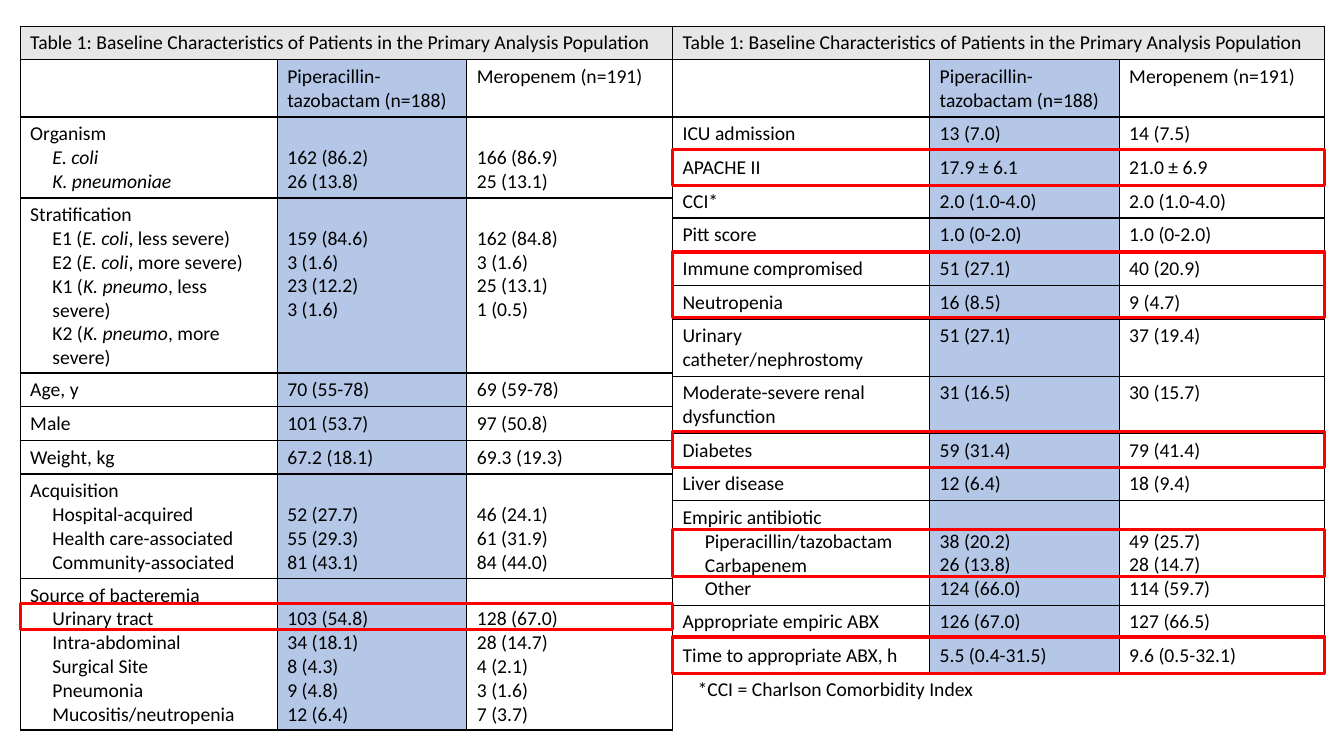
import pptx
import pptx.util
import pptx.dml.color
import pptx.enum.shapes
import pptx.oxml
import pptx.oxml.ns
from pptx.util import Inches

BLUE, GREY, RED, BLACK = "B4C7E7", "E7E6E6", "FF0000", "000000"
LEFT_X, RIGHT_X, TABLE_WIDTH = 0.2, 6.67, 6.47
COLUMNS = [2.55, 1.88, 2.04]
LINE_HEIGHT, ROW_PADDING = 0.234, 0.1
TOP_MARGIN, BOTTOM_MARGIN = 0.05, 0.02  # a small bottom margin lets the set row heights hold


def paint(color_format, hex_color):
    color_format.rgb = pptx.dml.color.RGBColor.from_string(hex_color)


def write(frame, text, size=14, font="Calibri", color=BLACK, indent=0):
    """One paragraph per line; words between underscores are italic.
    Lines after the first are indented by the given inches."""
    for number, line in enumerate(text.split("\n")):
        paragraph = frame.paragraphs[0] if number == 0 else frame.add_paragraph()
        if number and indent:
            paragraph._p.get_or_add_pPr().set("marL", str(Inches(indent)))
        for part, words in enumerate(line.split("_")):
            if words:
                run = paragraph.add_run()
                run.text = words
                run.font.size = pptx.util.Pt(size)
                run.font.name = font
                run.font.italic = part % 2 == 1
                paint(run.font.color, color)


# Rows: number of text lines, label, piperacillin-tazobactam, meropenem
header_rows = [
    (1, "Table 1: Baseline Characteristics of Patients in the Primary Analysis Population", "", ""),
    (2, "", "Piperacillin-tazobactam (n=188)", "Meropenem (n=191)"),
]
left_rows = [
    (3, "Organism\n_E. coli_\n_K. pneumoniae_",
     "162 (86.2)\n26 (13.8)", "166 (86.9)\n25 (13.1)"),
    (7, "Stratification\nE1 (_E. coli_, less severe)\nE2 (_E. coli_, more severe)\n"
        "K1 (_K. pneumo_, less severe)\nK2 (_K. pneumo_, more severe)",
     "159 (84.6)\n3 (1.6)\n23 (12.2)\n3 (1.6)",
     "162 (84.8)\n3 (1.6)\n25 (13.1)\n1 (0.5)"),
    (1, "Age, y", "70 (55-78)", "69 (59-78)"),
    (1, "Male", "101 (53.7)", "97 (50.8)"),
    (1, "Weight, kg", "67.2 (18.1)", "69.3 (19.3)"),
    (4, "Acquisition\nHospital-acquired\nHealth care-associated\nCommunity-associated",
     "52 (27.7)\n55 (29.3)\n81 (43.1)", "46 (24.1)\n61 (31.9)\n84 (44.0)"),
    (6, "Source of bacteremia\nUrinary tract\nIntra-abdominal\nSurgical Site\n"
        "Pneumonia\nMucositis/neutropenia",
     "103 (54.8)\n34 (18.1)\n8 (4.3)\n9 (4.8)\n12 (6.4)",
     "128 (67.0)\n28 (14.7)\n4 (2.1)\n3 (1.6)\n7 (3.7)"),
]
right_rows = [
    (1, "ICU admission", "13 (7.0)", "14 (7.5)"),
    (1, "APACHE II", "17.9 ± 6.1", "21.0 ± 6.9"),
    (1, "CCI*", "2.0 (1.0-4.0)", "2.0 (1.0-4.0)"),
    (1, "Pitt score", "1.0 (0-2.0)", "1.0 (0-2.0)"),
    (1, "Immune compromised", "51 (27.1)", "40 (20.9)"),
    (1, "Neutropenia", "16 (8.5)", "9 (4.7)"),
    (2, "Urinary catheter/nephrostomy", "51 (27.1)", "37 (19.4)"),
    (2, "Moderate-severe renal dysfunction", "31 (16.5)", "30 (15.7)"),
    (1, "Diabetes", "59 (31.4)", "79 (41.4)"),
    (1, "Liver disease", "12 (6.4)", "18 (9.4)"),
    (4, "Empiric antibiotic\nPiperacillin/tazobactam\nCarbapenem\nOther",
     "38 (20.2)\n26 (13.8)\n124 (66.0)", "49 (25.7)\n28 (14.7)\n114 (59.7)"),
    (1, "Appropriate empiric ABX", "126 (67.0)", "127 (66.5)"),
    (1, "Time to appropriate ABX, h", "5.5 (0.4-31.5)", "9.6 (0.5-32.1)"),
]

presentation = pptx.Presentation()
presentation.slide_width = Inches(13.33)
presentation.slide_height = Inches(7.5)
slide = presentation.slides.add_slide(presentation.slide_layouts[6])

# The two halves of the baseline table
for x, y, body_rows in [(LEFT_X, 0.26, left_rows), (RIGHT_X, 0.26, right_rows)]:
    rows = header_rows + body_rows
    heights = [lines * LINE_HEIGHT + ROW_PADDING for lines, *_ in rows]
    baseline = slide.shapes.add_table(
        len(rows), len(COLUMNS), Inches(x), Inches(y),
        Inches(TABLE_WIDTH), Inches(sum(heights))).table
    baseline.first_row = baseline.horz_banding = False
    for column, width in zip(baseline.columns, COLUMNS):
        column.width = Inches(width)
    baseline.cell(0, 0).merge(baseline.cell(0, 2))

    for r, (lines, *texts) in enumerate(rows):
        baseline.rows[r].height = Inches(heights[r])
        grouped = "\n" in texts[0]
        for c, text in enumerate(texts):
            cell = baseline.cell(r, c)
            properties = cell._tc.get_or_add_tcPr()
            for side in ("lnL", "lnR", "lnT", "lnB"):
                properties.append(pptx.oxml.parse_xml(
                    f'<a:{side} {pptx.oxml.ns.nsdecls("a")} w="12700"><a:solidFill>'
                    f'<a:srgbClr val="{BLACK}"/></a:solidFill></a:{side}>'))
            if r == 0 or c == 1:
                cell.fill.solid()
                paint(cell.fill.fore_color, GREY if r == 0 else BLUE)
            else:
                cell.fill.background()
            # Values of a group start one line below its heading
            cell.margin_top = Inches(TOP_MARGIN + (LINE_HEIGHT if grouped and c else 0))
            cell.margin_bottom = Inches(BOTTOM_MARGIN)
            cell.margin_left = Inches(0.1)
            cell.margin_right = Inches(0.2 if r > 1 and c == 0 else 0.1)
            if text:
                write(cell.text_frame, text, indent=0.22 if c == 0 else 0)

# Footnote
footnote = slide.shapes.add_textbox(Inches(6.82), Inches(6.67), Inches(2.96), Inches(0.34))
footnote.text_frame.word_wrap = False
write(footnote.text_frame, "*CCI = Charlson Comorbidity Index")

# Red frames around the rows that stand out
for x, y, height in [
    (LEFT_X, 5.99, 0.26),
    (RIGHT_X, 1.48, 0.36),
    (RIGHT_X, 2.5, 0.65),
    (RIGHT_X, 4.28, 0.36),
    (RIGHT_X, 5.25, 0.47),
    (RIGHT_X, 6.32, 0.36),
]:
    highlight = slide.shapes.add_shape(
        pptx.enum.shapes.MSO_SHAPE.RECTANGLE,
        Inches(x), Inches(y), Inches(TABLE_WIDTH), Inches(height))
    highlight.shadow.inherit = False
    highlight.fill.background()
    paint(highlight.line.color, RED)
    highlight.line.width = pptx.util.Pt(2.25)

presentation.save("out.pptx")
